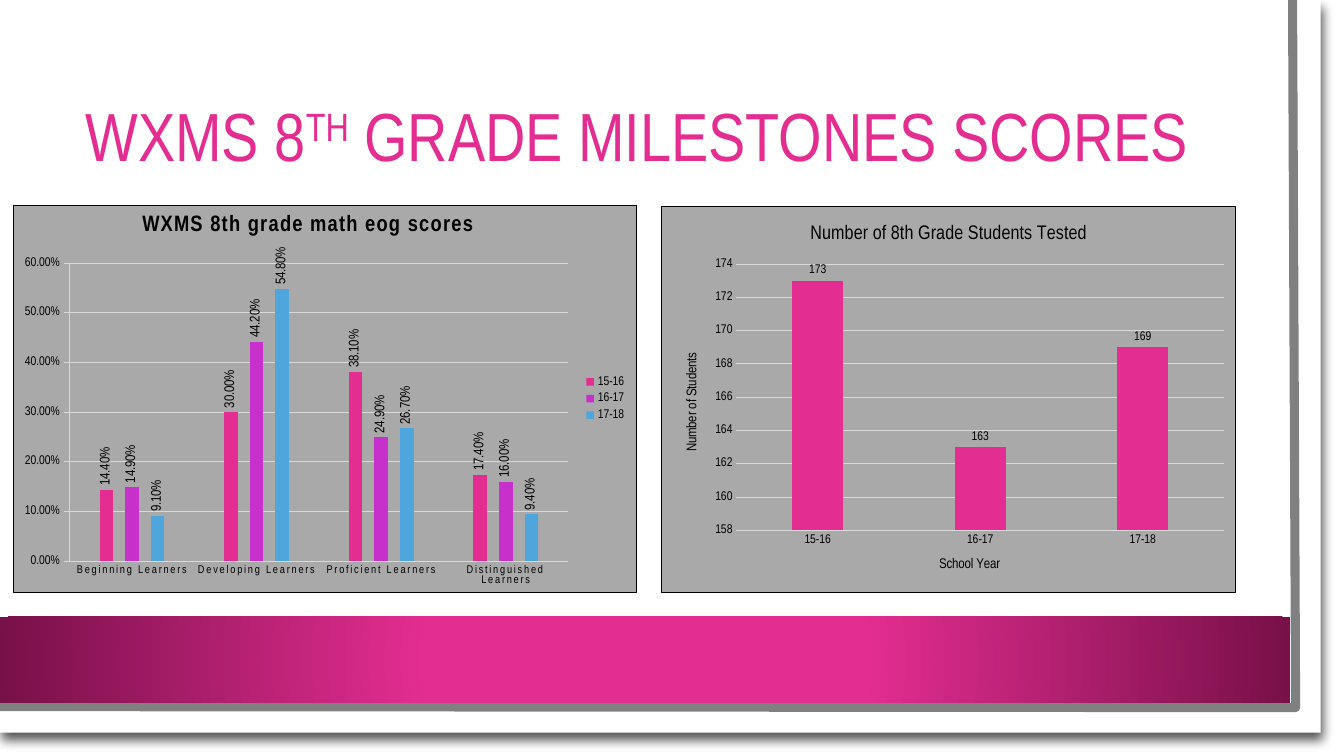
from dataclasses import dataclass
from typing import Optional

from lxml.etree import SubElement
from pptx import Presentation
from pptx.chart.chart import Chart
from pptx.chart.data import CategoryChartData as ChartData
from pptx.dml.color import RGBColor as Rgb
from pptx.enum.chart import XL_CHART_TYPE as Kind, XL_LABEL_POSITION as LabelPos
from pptx.enum.chart import XL_LEGEND_POSITION as LegendPos, XL_TICK_MARK as Tick
from pptx.enum.shapes import MSO_SHAPE as Preset
from pptx.enum.text import MSO_ANCHOR as Anchor, MSO_AUTO_SIZE as Fit, PP_ALIGN as Align
from pptx.oxml import parse_xml
from pptx.oxml.ns import nsdecls, qn
from pptx.util import Inches, Pt


@dataclass(frozen=True)
class Theme:
    font: str = "Arial Narrow"
    pink: str = "E32D91"
    plum: str = "781049"
    violet: str = "C830CC"
    blue: str = "4EA6DC"
    white: str = "FFFFFF"
    black: str = "000000"
    edge: str = "808080"
    panel: str = "A9A9A9"
    grid: str = "D9D9D9"
    head: float = 48.6
    body: float = 10
    tick: float = 9


@dataclass(frozen=True)
class Series:
    name: str
    values: tuple[float, ...]
    color: str


@dataclass(frozen=True)
class Box:
    """Left, top, width and height, in inches or as shares of a chart."""
    x: float
    y: float
    w: float
    h: float


@dataclass(frozen=True)
class Graph:
    box: Box
    plot: Box
    title: str
    size: float
    cats: tuple[str, ...]
    series: tuple[Series, ...]
    scale: tuple[float, float, float]
    form: str
    gap: int
    overlap: int
    label: float
    cat: float
    title_at: Optional[tuple[float, float]] = None
    bold: bool = False
    spread: int = 0
    upright: bool = False
    line: bool = False
    legend: bool = False
    names: tuple[str, ...] = ()


T = Theme()
GRAPHS = (
    Graph(Box(0.13, 2.03, 6.19, 3.85), Box(0.09, 0.15, 0.8, 0.77),
          "WXMS 8th grade math eog scores", 16,
          ("Beginning Learners", "Developing Learners",
           "Proficient Learners", "Distinguished Learners"),
          (Series("15-16", (0.144, 0.3, 0.381, 0.174), T.pink),
           Series("16-17", (0.149, 0.442, 0.249, 0.16), T.violet),
           Series("17-18", (0.091, 0.548, 0.267, 0.094), T.blue)),
          (0, 0.6, 0.1), "0.00%", 444, -90, 10, 8, title_at=(0.2, 0.01),
          bold=True, spread=120, upright=True, line=True, legend=True),
    Graph(Box(6.56, 2.04, 5.7, 3.84), Box(0.13, 0.15, 0.85, 0.69),
          "Number of 8th Grade Students Tested", 14,
          ("15-16", "16-17", "17-18"),
          (Series("Series 1", (173, 163, 169), T.pink),),
          (158, 174, 2), "General", 219, -27, 9, 9,
          names=("School Year", "Number of Students")),
)


def style(font, size: float, color: str = T.black, bold: bool = False) -> None:
    font.name, font.size, font.bold = T.font, Pt(size), bold
    font.color.rgb = Rgb.from_string(color)


def stroke(line, color: str, width: float = 0.75) -> None:
    line.color.rgb = Rgb.from_string(color)
    line.width = Pt(width)


def block(page, box: Box):
    shape = page.shapes.add_shape(
        Preset.RECTANGLE, *(Inches(v) for v in (box.x, box.y, box.w, box.h)))
    shape.shadow.inherit = False
    shape.line.fill.background()
    return shape


def draw_frame(page):
    """Draw the sheet, its grey edge and the pink band; return the band."""
    sheet = block(page, Box(0, 0, 13.1, 7.27))
    sheet.fill.solid()
    sheet.fill.fore_color.rgb = Rgb.from_string(T.white)
    glow = SubElement(sheet.element.spPr.find(qn("a:effectLst")), qn("a:outerShdw"),
                      blurRad=str(Pt(7.8)), dist=str(Pt(6)), dir=str(73 * 60000))
    tint = SubElement(glow, qn("a:srgbClr"), val=T.black)
    SubElement(tint, qn("a:alpha"), val="68000")

    pen = page.shapes.build_freeform(Inches(12.82), 0)
    pen.add_line_segments([(Inches(12.85), Inches(7.02)),
                           (Inches(-0.03), Inches(7.01))], close=False)
    edge = pen.convert_to_shape()
    edge.shadow.inherit = False
    edge.fill.background()
    stroke(edge.line, T.edge, 6.5)

    band = block(page, Box(0, 6.12, 12.8, 0.85))
    band.element.spPr.find(qn("a:prstGeom")).addnext(parse_xml(
        f'<a:gradFill {nsdecls("a")} rotWithShape="1"><a:gsLst>'
        f'<a:gs pos="34000"><a:srgbClr val="{T.pink}"/></a:gs>'
        f'<a:gs pos="100000"><a:srgbClr val="{T.plum}"/></a:gs></a:gsLst>'
        '<a:path path="circle"><a:fillToRect l="50000" t="50000" r="50000" b="50000"/>'
        '</a:path></a:gradFill>'))
    return band


def draw_title(page, below) -> None:
    title = page.shapes.title
    below.element.addnext(title.element)
    title.left, title.top = Inches(0.75), Inches(0.75)
    title.width, title.height = Inches(11.37), Inches(1.27)
    frame = title.text_frame
    frame.auto_size, frame.vertical_anchor, frame.word_wrap = Fit.NONE, Anchor.MIDDLE, True
    line = frame.paragraphs[0]
    line.alignment, line.line_spacing = Align.LEFT, 0.9
    for text in ("WXMS 8", "TH", " GRADE MILESTONES SCORES"):
        run = line.add_run()
        run.text = text
        style(run.font, T.head, T.pink)
    list(title.element.iter(qn("a:rPr")))[1].set("baseline", "30000")


def place(node, index: int, **share: float) -> None:
    """Give a chart part a manual layout, as shares of the chart."""
    old = node.find(qn("c:layout"))
    if old is not None:
        node.remove(old)
    inner = '<c:layoutTarget val="inner"/>' if "w" in share else ""
    modes = "".join(f'<c:{k}Mode val="edge"/>' for k in "xy")
    sizes = "".join(f'<c:{k} val="{v}"/>' for k, v in share.items())
    node.insert(index, parse_xml(
        f'<c:layout {nsdecls("c")}><c:manualLayout>{inner}{modes}{sizes}'
        '</c:manualLayout></c:layout>'))


def caption(frame, text: str, size: float, bold: bool = False) -> None:
    frame.text = text
    style(frame.paragraphs[0].runs[0].font, size, bold=bold)


def set_axes(chart: Chart, graph: Graph) -> None:
    cat, val = chart.category_axis, chart.value_axis
    for axis, size in ((cat, graph.cat), (val, T.tick)):
        axis.major_tick_mark = axis.minor_tick_mark = Tick.NONE
        style(axis.tick_labels.font, size)
        stroke(axis.format.line, T.grid)
    for axis, name in zip((cat, val), graph.names):
        caption(axis.axis_title.text_frame, name, T.body)
    val.minimum_scale, val.maximum_scale, val.major_unit = graph.scale
    val.tick_labels.number_format = graph.form
    val.tick_labels.number_format_is_linked = False
    stroke(val.major_gridlines.format.line, T.grid)
    if graph.line:
        val.major_tick_mark = Tick.OUTSIDE
    else:
        val.format.line.fill.background()


def draw_graph(page, graph: Graph) -> None:
    data = ChartData(number_format=graph.form)
    data.categories = graph.cats
    for item in graph.series:
        data.add_series(item.name, item.values)
    box, plot = graph.box, graph.plot
    chart = page.shapes.add_chart(
        Kind.COLUMN_CLUSTERED,
        *(Inches(v) for v in (box.x, box.y, box.w, box.h)), data).chart
    style(chart.font, T.body)
    root = chart.element
    root.find(qn("c:txPr")).addprevious(parse_xml(
        f'<c:spPr {nsdecls("c", "a")}><a:solidFill><a:srgbClr val="{T.panel}"/></a:solidFill>'
        f'<a:ln w="{Pt(0.75)}"><a:solidFill><a:srgbClr val="{T.black}"/></a:solidFill>'
        '</a:ln></c:spPr>'))

    caption(chart.chart_title.text_frame, graph.title, graph.size, graph.bold)
    chart.has_legend = graph.legend
    if graph.legend:
        chart.legend.position = LegendPos.RIGHT
        chart.legend.include_in_layout = False
        style(chart.legend.font, T.tick)
    set_axes(chart, graph)

    bars = chart.plots[0]
    bars.gap_width, bars.overlap, bars.vary_by_categories = graph.gap, graph.overlap, False
    for bar, item in zip(bars.series, graph.series):
        bar.format.fill.solid()
        bar.format.fill.fore_color.rgb = Rgb.from_string(item.color)
        labels = bar.data_labels
        labels.show_value, labels.position = True, LabelPos.OUTSIDE_END
        labels.number_format, labels.number_format_is_linked = graph.form, False
        style(labels.font, graph.label)
    if graph.upright:
        for body in root.iterfind(f'.//{qn("c:dLbls")}/{qn("c:txPr")}/{qn("a:bodyPr")}'):
            body.set("rot", "-5400000")
            body.set("vert", "horz")

    head = root.find(f'{qn("c:chart")}/{qn("c:title")}')
    if graph.spread:
        ticks = root.find(f'.//{qn("c:catAx")}/{qn("c:txPr")}')
        ticks.find(f'.//{qn("a:defRPr")}').set("spc", str(graph.spread))
        head.find(f'.//{qn("a:rPr")}').set("spc", "100")
    if graph.title_at:
        place(head, 1, x=graph.title_at[0], y=graph.title_at[1])
    place(root.find(f'.//{qn("c:plotArea")}'), 0, x=plot.x, y=plot.y, w=plot.w, h=plot.h)


def main() -> None:
    deck = Presentation()
    deck.slide_width, deck.slide_height = Inches(13.33), Inches(7.5)
    page = deck.slides.add_slide(deck.slide_layouts[5])
    draw_title(page, draw_frame(page))
    for graph in GRAPHS:
        draw_graph(page, graph)
    deck.save("out.pptx")


if __name__ == "__main__":
    main()
